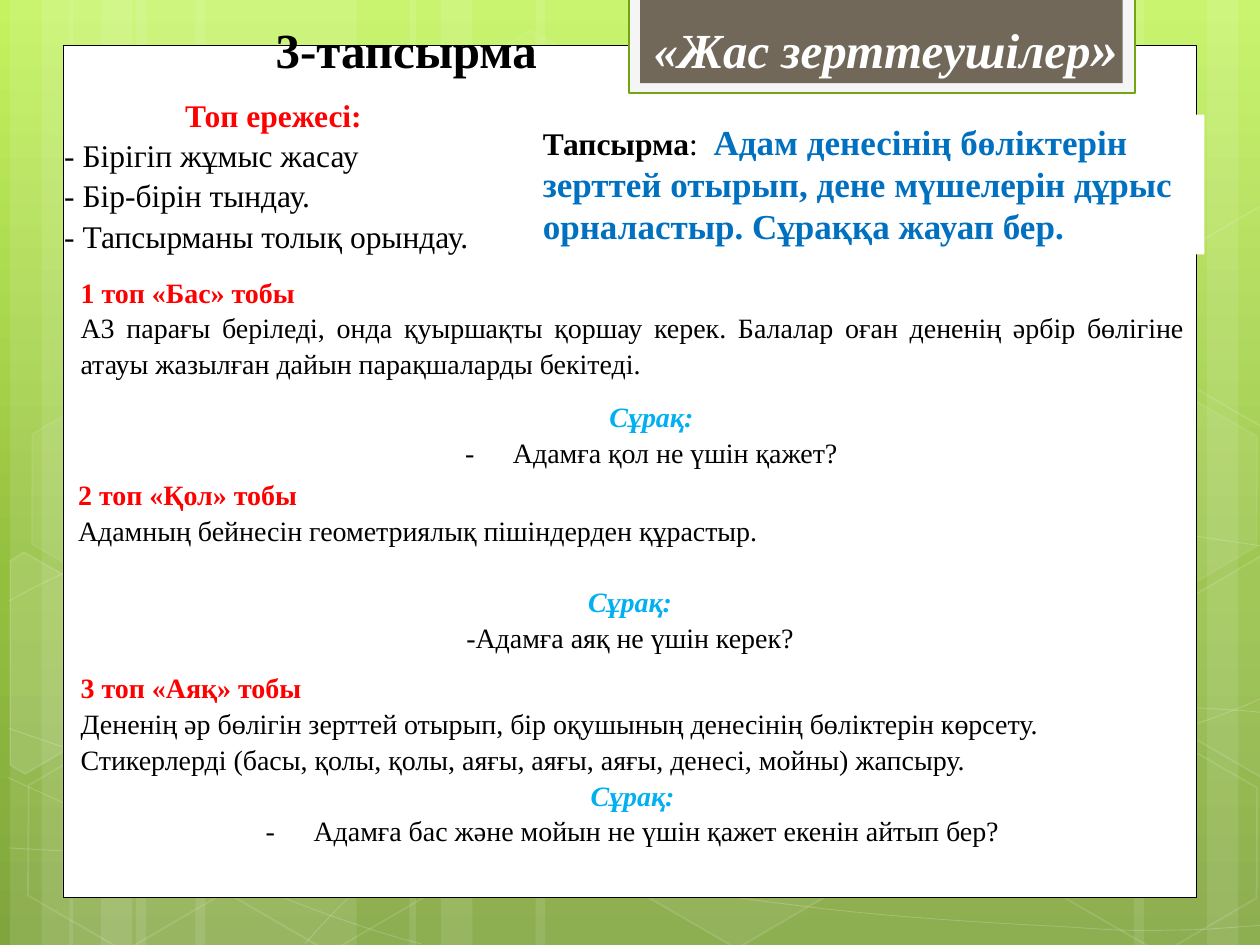
"""Build the group task slide for the young explorers lesson."""
from copy import deepcopy
from math import cos, radians, sin

from pptx import Presentation
from pptx.dml.color import RGBColor
from pptx.enum.shapes import MSO_SHAPE
from pptx.enum.text import MSO_ANCHOR, PP_ALIGN
from pptx.oxml.ns import qn
from pptx.util import Inches, Pt

RECT, HEX = MSO_SHAPE.RECTANGLE, MSO_SHAPE.HEXAGON
LEFT, MID, JUST = PP_ALIGN.LEFT, PP_ALIGN.CENTER, PP_ALIGN.JUSTIFY
TOP = MSO_ANCHOR.TOP
FONT = "Times New Roman"
PLAIN = "{2D5ABB26-0587-4C30-8999-92F81FD0307C}"
TILT = 30
COLORS = {
    "white": "FFFFFF", "black": "000000", "red": "FF0000", "sky": "00B0F0",
    "blue": "0070C0", "pale": "F5F5F5", "brown": "71685A", "green": "74A510",
    "lime": "C3F35F", "leaf": "93BF3F", "moss": "81A53E",
}
BANDS = [
    (1.08, 1.75), (0.08, 0.5), (0.33, 0.83), (1.55, 1.75), (0.55, 0.5), (0.8, 0.83),
    (7.33, 1.75), (9.58, 0.5), (9, 0.83), (4.25, 3.08), (3.25, 0.5), (3.5, 0.83),
]
CURVES = [
    [(0.07, 6.73), (0.61, 6.76), (1.15, 6.79), (1.9, 6.78), (2.65, 6.77), (3.58, 6.75),
     (4.58, 6.65), (5.58, 6.55), (7, 6.36), (7.92, 6.17), (8.83, 5.98), (9.77, 5.68),
     (10.07, 5.51)],
    [(0.07, 4.77), (0.36, 4.61), (0.65, 4.46), (1.21, 4.31), (1.78, 4.16), (2.59, 3.94),
     (3.47, 3.87), (4.36, 3.8), (5.44, 3.79), (6.54, 3.87), (7.64, 3.95), (9.47, 4.26),
     (10.07, 4.34)],
    [(0.06, 6.17), (1.27, 6.72), (2.47, 7.27), (3.34, 7.49)],
    [(0.07, 5.78), (0.38, 5.89), (0.7, 6), (1.28, 6.16), (1.86, 6.31), (2.73, 6.56),
     (3.57, 6.73), (4.4, 6.9), (5.45, 7.08), (6.28, 7.18), (7.11, 7.29), (8, 7.33),
     (8.53, 7.36), (9.05, 7.4), (9.19, 7.38), (9.45, 7.38), (9.71, 7.37), (9.89, 7.35),
     (10.07, 7.34)],
    [(2.42, 7.49), (2.6, 7.29), (2.78, 7.09), (3.02, 6.91), (3.26, 6.73), (3.6, 6.53),
     (3.88, 6.39), (4.16, 6.25), (4.33, 6.19), (4.7, 6.09), (5.06, 5.99), (5.73, 5.85),
     (6.08, 5.78), (6.44, 5.71), (6.49, 5.71), (6.8, 5.69), (7.11, 5.66), (7.6, 5.63),
     (7.94, 5.62), (8.29, 5.61), (8.86, 5.62), (8.86, 5.62), (9.08, 5.62), (9.3, 5.62),
     (9.53, 5.62), (9.71, 5.63), (9.88, 5.64), (9.97, 5.65), (10.06, 5.66),
     (10.03, 5.65), (10.06, 5.66)],
]
CELLS = [
    (3.34, 0.36, 4, 8), (4.97, 5.89, 6, 12), (0.11, 5.91, 0, 12), (0.14, 3.12, 7, 8),
    (1.74, 5.92, 0, 12), (7.53, 4.53, 10, 12), (8.34, 5.93, 0, 12), (8.34, 3.14, 7, 8),
]
EDGES = [
    ((0.36, 5.35), 10, [(0.08, 4.45), (0.19, 4.38), (0.96, 4.82), (0.95, 5.7),
                        (0.2, 6.14), (0.08, 6.07)]),
    ((9.85, 5.2), 4, [(9.26, 4.85), (10.01, 4.41), (10.09, 4.46), (10.09, 6.13),
                      (10.02, 6.17), (9.26, 5.73)]),
    ((9.85, 2.41), 0, [(9.26, 2.07), (10.01, 1.63), (10.1, 1.68), (10.09, 3.35),
                       (10.02, 3.39), (9.26, 2.95)]),
]


def rgb(name):
    """Return a named colour."""
    return RGBColor.from_string(COLORS[name])


def fade(part, alpha):
    """Give the solid fill inside an XML part an opacity in percent."""
    if alpha < 100:
        tone = part.find(qn("a:solidFill")).find(qn("a:srgbClr"))
        tone.append(tone.makeelement(qn("a:alpha"), {"val": str(alpha * 1000)}))


def paint(shape, fill=None, line=None, width=1, clear=100, dim=100):
    """Set fill, line and opacity of a shape."""
    shape.shadow.inherit = False
    props = shape._element.spPr
    if fill:
        shape.fill.solid()
        shape.fill.fore_color.rgb = rgb(fill)
        fade(props, clear)
    else:
        shape.fill.background()
    if line:
        shape.line.color.rgb = rgb(line)
        shape.line.width = Pt(width)
        fade(props.find(qn("a:ln")), dim)
    else:
        shape.line.fill.background()


def block(slide, kind, box, **look):
    """Add a painted preset shape."""
    shape = slide.shapes.add_shape(kind, *map(Inches, box))
    paint(shape, **look)
    return shape


def trace(slide, pts, close, **look):
    """Add a painted outline through the points."""
    dots = [(Inches(x), Inches(y)) for x, y in pts]
    pen = slide.shapes.build_freeform(*dots[0])
    pen.add_line_segments(dots[1:], close=close)
    shape = pen.convert_to_shape()
    paint(shape, **look)
    return shape


def bend(shape):
    """Turn each three straight segments of an outline into a cubic curve."""
    legs = list(shape._element.iter(qn("a:lnTo")))
    for i in range(0, len(legs), 3):
        cubic = legs[i].makeelement(qn("a:cubicBezTo"))
        legs[i].addprevious(cubic)
        for leg in legs[i:i + 3]:
            cubic.append(leg[0])
            leg.getparent().remove(leg)


def turn(pts, hub):
    """Rotate points back by the tilt around a hub."""
    c, s = cos(radians(TILT)), sin(radians(TILT))
    return [(hub[0] + (x - hub[0]) * c + (y - hub[1]) * s,
             hub[1] - (x - hub[0]) * s + (y - hub[1]) * c) for x, y in pts]


def write(para, text, size, color="black", bold=False, slant=False):
    """Add one run to a paragraph."""
    run = para.add_run()
    run.text = text
    font = run.font
    font.name, font.size, font.bold, font.italic = FONT, Pt(size), bold, slant
    font.color.rgb = rgb(color)


def dash(para):
    """Give a paragraph a hanging dash bullet."""
    props = para._p.get_or_add_pPr()
    props.set("marL", str(Inches(0.38)))
    props.set("indent", str(Inches(-0.38)))
    props.append(props.makeelement(qn("a:buFont"), {"typeface": FONT}))
    props.append(props.makeelement(qn("a:buChar"), {"char": "-"}))


def note(slide, box, size, lines):
    """Add a plain one-cell table of (kind, text, alignment) lines."""
    looks = {"head": ("red", True), "ask": ("sky", True, True), "gap": ("sky", True, True)}
    frame = slide.shapes.add_table(1, 1, *map(Inches, box))
    table = frame.table
    table.first_row = table.horz_banding = False
    next(frame._element.iter(qn("a:tableStyleId"))).text = PLAIN
    cell = table.cell(0, 0)
    cell.fill.background()
    cell.margin_left = cell.margin_right = Inches(0.12)
    cell.margin_top = cell.margin_bottom = 0
    for i, (kind, text, align) in enumerate(lines):
        body = cell.text_frame
        para = body.add_paragraph() if i else body.paragraphs[0]
        para.alignment, para.line_spacing = align, 1.15
        if kind == "gap":
            para.space_before = Pt(20.3)
        if kind == "dash":
            dash(para)
        write(para, text, size, *looks.get(kind, ()))


def scene(slide):
    """Draw the green backdrop and the white panel."""
    fill = slide.background.fill
    fill.gradient()
    fill.gradient_angle = 270
    stops = next(slide._element.iter(qn("a:gsLst")))
    stops.append(deepcopy(stops[0]))
    for stop, name, place in zip(fill.gradient_stops, ("lime", "leaf", "moss"), (0, 0.62, 1)):
        stop.color.rgb, stop.position = rgb(name), place
    for x, w in BANDS:
        block(slide, RECT, (x, 0, w, 7.5), fill="white", clear=10)
    for knots in CURVES:
        bend(trace(slide, knots, False, line="white", width=0.5, dim=20))
    for x, y, clear, dim in CELLS:
        tile = block(slide, HEX, (x, y, 1.75, 1.52), fill="white" if clear else None,
                     clear=clear, line="white", dim=dim)
        tile.rotation = TILT
        tile.adjustments[0], tile.adjustments[1] = 0.285, 1.155
    for hub, clear, pts in EDGES:
        edge = trace(slide, turn(pts, hub), True, fill="white" if clear else None,
                     clear=clear, line="white", dim=12)
        edge.rotation = TILT
    block(slide, RECT, (0.5, 0.36, 9, 6.76), fill="white", line="black", width=0.5)
    block(slide, RECT, (4.99, -0.02, 4.02, 0.76), fill="pale", line="green", width=1.25)
    block(slide, RECT, (5.08, -0.02, 3.83, 0.68), fill="brown")


def title(slide):
    """Write the two-part heading, split by a tab stop."""
    box = slide.shapes.add_textbox(*map(Inches, (2.09, 0.05, 6.97, 0.64)))
    box.text_frame.word_wrap = True
    para = box.text_frame.paragraphs[0]
    props = para._p.get_or_add_pPr()
    tabs = props.makeelement(qn("a:tabLst"))
    tabs.append(tabs.makeelement(qn("a:tab"), {"pos": str(Inches(3)), "algn": "l"}))
    props.append(tabs)
    write(para, "3-тапсырма\t", 28, bold=True)
    write(para, "«Жас зерттеушілер", 28, "white", True, True)
    write(para, "»", 32, "white", True, True)


def task(slide):
    """Write the task box."""
    box = block(slide, RECT, (4.21, 0.91, 5.35, 1.11), fill="white")
    box.text_frame.word_wrap = True
    box.text_frame.vertical_anchor = TOP
    para = box.text_frame.paragraphs[0]
    para.alignment = LEFT
    write(para, "Тапсырма", 18, bold=True)
    write(para, ":  ", 18)
    write(para, "Адам денесінің бөліктерін зерттей отырып, дене мүшелерін дұрыс "
          "орналастыр. Сұраққа жауап бер.", 20, "blue", True)


def main():
    """Build and save the slide."""
    deck = Presentation()
    deck.slide_width, deck.slide_height = Inches(10), Inches(7.5)
    slide = deck.slides.add_slide(deck.slide_layouts[6])
    scene(slide)
    title(slide)
    note(slide, (0.39, 0.75, 3.56, 1.38), 18, [
        ("head", "Топ ережесі:", MID), ("body", "- Бірігіп жұмыс жасау", LEFT),
        ("body", "- Бір-бірін тындау.", LEFT), ("body", "- Тапсырманы толық орындау.", LEFT)])
    note(slide, (0.52, 2.17, 9, 0.92), 16, [
        ("head", "1 топ «Бас» тобы", LEFT),
        ("body", "А3 парағы беріледі, онда қуыршақты қоршау керек. Балалар оған дененің "
         "әрбір бөлігіне атауы жазылған дайын парақшаларды бекітеді.", JUST)])
    note(slide, (0.67, 3.16, 9, 0.61), 16, [
        ("ask", "Сұрақ:", MID), ("dash", "Адамға қол не үшін қажет?", MID)])
    note(slide, (0.5, 3.78, 9, 1.62), 16, [
        ("head", "2 топ «Қол» тобы", LEFT),
        ("body", "Адамның бейнесін геометриялық пішіндерден құрастыр.", LEFT),
        ("gap", "Сұрақ:", MID), ("body", "-Адамға аяқ не үшін керек?", MID)])
    note(slide, (0.52, 5.31, 9, 1.53), 16, [
        ("head", "3 топ «Аяқ» тобы", LEFT),
        ("body", "Дененің әр бөлігін зерттей отырып, бір оқушының денесінің бөліктерін "
         "көрсету. Стикерлерді (басы, қолы, қолы, аяғы, аяғы, аяғы, денесі, мойны) "
         "жапсыру.", LEFT),
        ("ask", "Сұрақ:", MID),
        ("dash", "Адамға бас және мойын не үшін қажет екенін айтып бер?", MID)])
    task(slide)
    deck.save("out.pptx")


if __name__ == "__main__":
    main()
